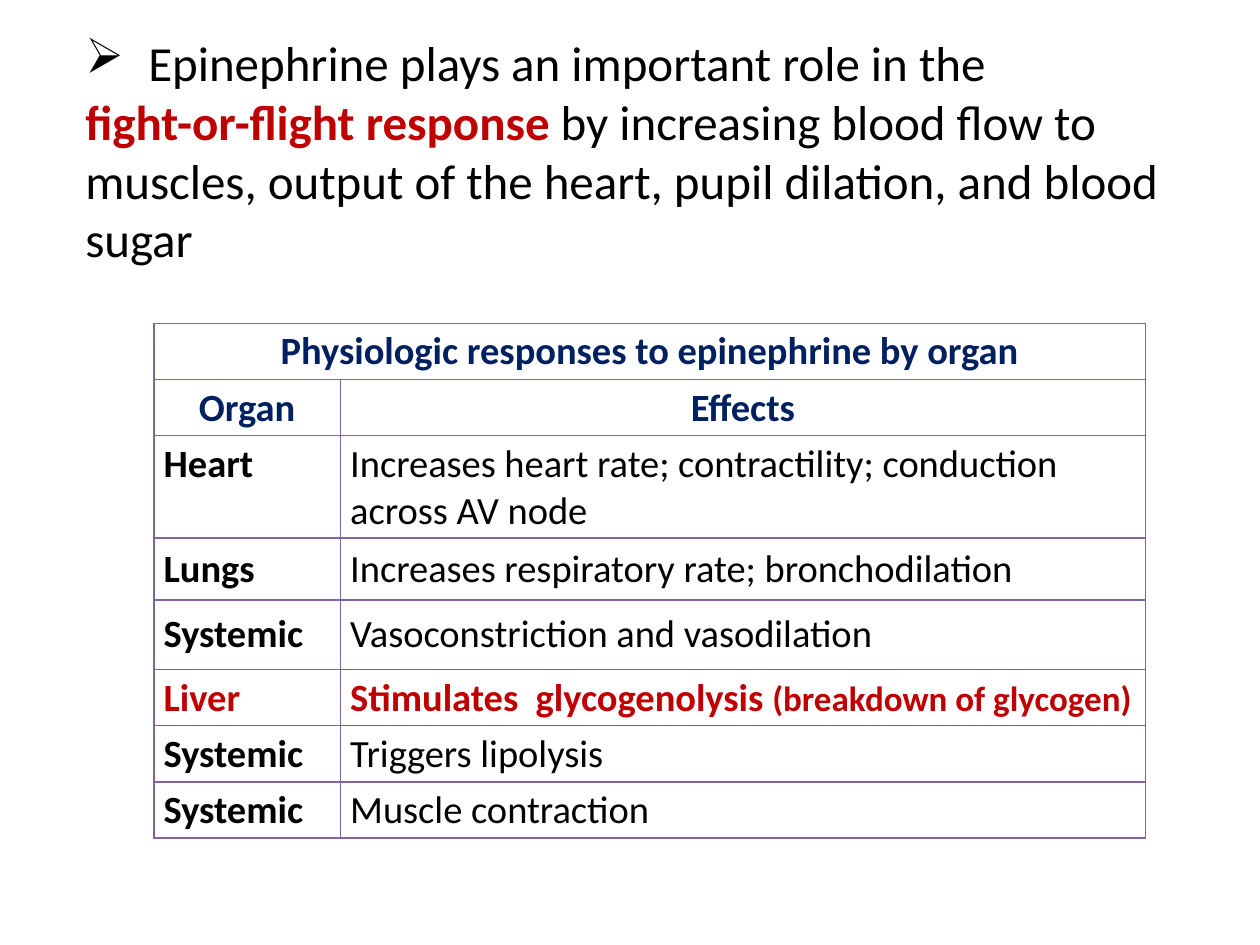
from dataclasses import dataclass

from lxml import etree
from pptx import Presentation
from pptx import util as u
from pptx.dml.color import RGBColor
from pptx.enum import text as t
from pptx.oxml import ns

BLACK, NAVY, RED, PURPLE = "000000", "002060", "C00000", "8064A2"


@dataclass
class Row:
    organ: str
    effect: str
    high: float = 1.13
    ink: str = BLACK
    bold: bool = False
    head: bool = False
    note: str = ""


ROWS = [
    Row("Physiologic responses to epinephrine by organ", "", ink=NAVY, head=True),
    Row("Organ", "Effects", ink=NAVY, bold=True, head=True),
    Row("Heart", "Increases heart rate; contractility; conduction across AV node", 2.06),
    Row("Lungs", "Increases respiratory rate; bronchodilation", 1.25),
    Row("Systemic", "Vasoconstriction and vasodilation", 1.4),
    Row("Liver", "Stimulates  glycogenolysis ", ink=RED, bold=True,
        note="(breakdown of glycogen)"),
    Row("Systemic", "Triggers lipolysis"),
    Row("Systemic", "Muscle contraction"),
]
WIDTHS = [3.76, 16.23]


def tint(color, code: str) -> None:
    color.rgb = RGBColor.from_string(code)


def style(font, size: float, ink: str, bold: bool = False) -> None:
    font.name, font.size, font.bold = "Calibri", u.Pt(size), bold
    tint(font.color, ink)


def border(cell) -> None:
    props = cell._tc.get_or_add_tcPr()
    for side in ("lnL", "lnR", "lnT", "lnB"):
        line = etree.SubElement(props, ns.qn(f"a:{side}"), w=str(u.Pt(1)))
        fill = etree.SubElement(line, ns.qn("a:solidFill"))
        etree.SubElement(fill, ns.qn("a:srgbClr"), val=PURPLE)


def write(cell, words: str, row: Row, bold: bool, note: str = "") -> None:
    cell.margin_left = cell.margin_right = u.Cm(0.2)
    cell.margin_top = cell.margin_bottom = u.Cm(0.1)
    cell.vertical_anchor = t.MSO_ANCHOR.MIDDLE
    border(cell)
    cell.fill.background()
    para = cell.text_frame.paragraphs[0]
    para.alignment = t.PP_ALIGN.CENTER if row.head else t.PP_ALIGN.LEFT
    style(para.font, 22, row.ink, bold)
    if words:
        para.add_run().text = words
    if note:
        run = para.add_run()
        run.text = note
        run.font.size = u.Pt(20)


def add_intro(slide) -> None:
    box = slide.shapes.add_textbox(u.Cm(1.47), u.Cm(0.53), u.Cm(22.2), u.Cm(5.05))
    frame = box.text_frame
    frame.word_wrap = True
    frame.auto_size = t.MSO_AUTO_SIZE.SHAPE_TO_FIT_TEXT
    lead = frame.paragraphs[0]
    lead.add_run().text = "Epinephrine plays an important role in the"
    style(lead.font, 28, BLACK)
    props = lead._p.get_or_add_pPr()
    indent = u.Cm(1.27)
    props.set("marL", str(indent))
    props.set("indent", str(-indent))
    bullet = etree.Element(ns.qn("a:buChar"), char="➢")
    props.insert(0, bullet)
    rest = frame.add_paragraph()
    for words, ink, bold in (
        ("fight-or-flight response ", RED, True),
        ("by increasing blood flow to muscles, output of the heart, "
         "pupil dilation, and blood sugar", BLACK, False),
    ):
        run = rest.add_run()
        run.text = words
        style(run.font, 28, ink, bold)


def add_organs(slide) -> None:
    high = sum(row.high for row in ROWS)
    table = slide.shapes.add_table(
        len(ROWS), len(WIDTHS), u.Cm(3.1), u.Cm(6.52),
        u.Cm(sum(WIDTHS)), u.Cm(high)).table
    table.first_row = table.horz_banding = False
    for col, wide in zip(table.columns, WIDTHS):
        col.width = u.Cm(wide)
    for i, row in enumerate(ROWS):
        table.rows[i].height = u.Cm(row.high)
        write(table.cell(i, 0), row.organ, row, True)
        write(table.cell(i, 1), row.effect, row, row.bold, row.note)
    table.cell(0, 0).merge(table.cell(0, 1))
    table.cell(2, 0).vertical_anchor = t.MSO_ANCHOR.TOP


def main() -> None:
    deck = Presentation()
    deck.slide_width, deck.slide_height = u.Cm(25.4), u.Cm(19.05)
    slide = deck.slides.add_slide(deck.slide_layouts[6])
    add_intro(slide)
    add_organs(slide)
    deck.save("out.pptx")


if __name__ == "__main__":
    main()
